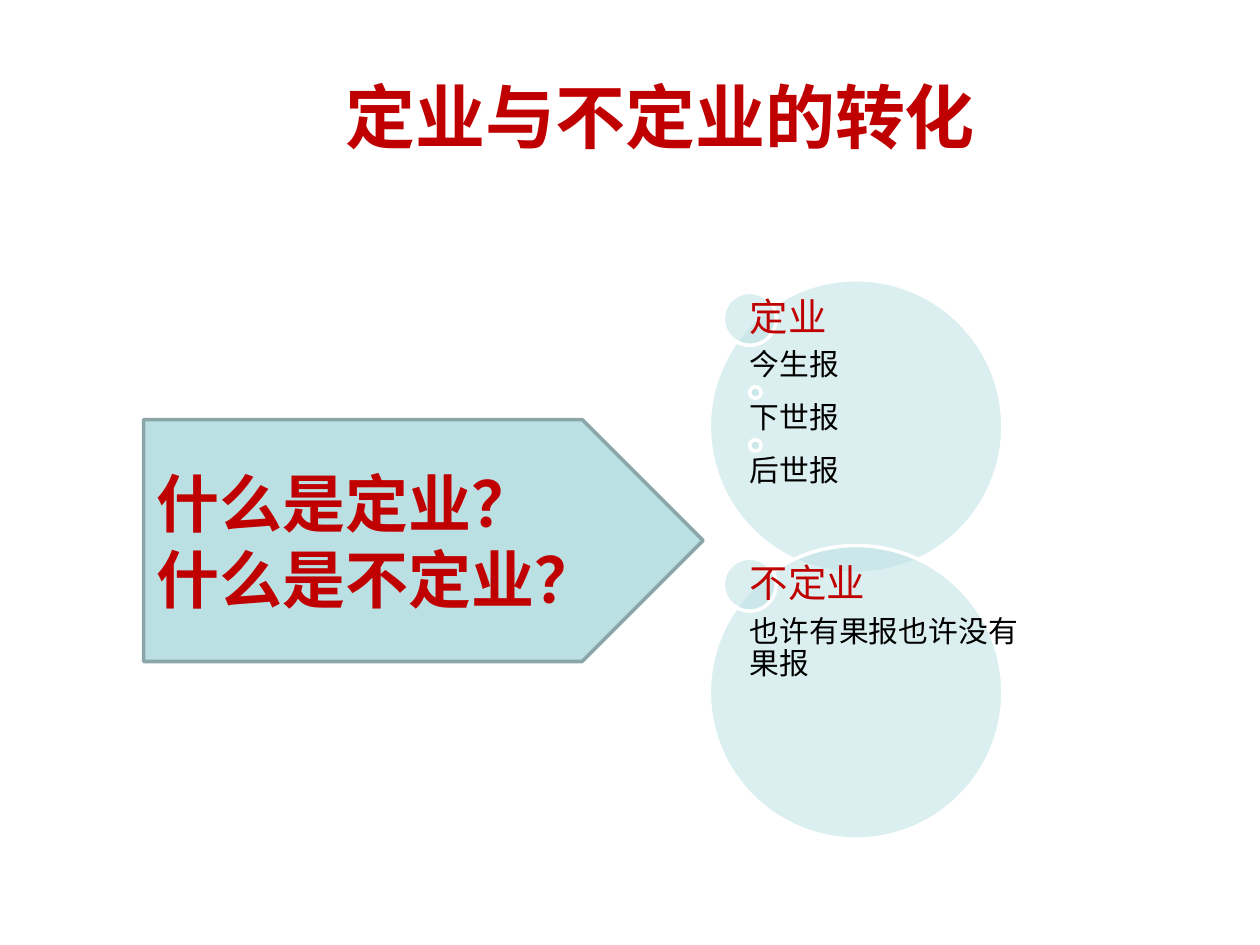
from lxml.etree import SubElement
from pptx import Presentation
from pptx.dml.color import RGBColor
from pptx.enum.shapes import MSO_SHAPE
from pptx.enum.text import MSO_ANCHOR, PP_ALIGN
from pptx.oxml.ns import qn
from pptx.util import Inches, Pt

COLORS = {
    "red": "C00000",
    "black": "000000",
    "white": "FFFFFF",
    "aqua": "BBE0E3",
    "edge": "8AA6A8",
}
TOPICS = [
    (2.22, "定业", 0.33, ["今生报", "下世报", "后世报"]),
    (4.33, "不定业", 0.6, ["也许有果报也许没有果报"]),
]


class SlideBuilder:
    font_name = "Arial"
    line_width = Pt(2)

    def __init__(self, slide):
        self.slide = slide

    def color(self, name):
        return RGBColor.from_string(COLORS[name])

    def set_text(self, shape, lines, size, color, bold=False,
                 align=PP_ALIGN.LEFT, spacing=1.0):
        frame = shape.text_frame
        frame.word_wrap = True
        frame.vertical_anchor = MSO_ANCHOR.MIDDLE
        frame.text = "\n".join(lines)
        for paragraph in frame.paragraphs:
            paragraph.alignment = align
            paragraph.line_spacing = spacing
            paragraph.font.name = self.font_name
            paragraph.font.size = Pt(size)
            paragraph.font.bold = bold
            paragraph.font.color.rgb = self.color(color)

    def shape(self, kind, left, top, width, height, line):
        shape = self.slide.shapes.add_shape(
            kind, Inches(left), Inches(top), Inches(width), Inches(height))
        shape.shadow.inherit = False
        shape.fill.solid()
        shape.fill.fore_color.rgb = self.color("aqua")
        shape.line.color.rgb = self.color(line)
        shape.line.width = self.line_width
        return shape

    def circle(self, left, top, diameter):
        circle = self.shape(MSO_SHAPE.OVAL, left, top, diameter, diameter, "white")
        fill_color = circle.element.spPr.find(qn("a:solidFill"))[0]
        SubElement(fill_color, qn("a:alpha"), val="50000")

    def text(self, left, top, width, height, content, size, color, **style):
        box = self.slide.shapes.add_textbox(
            Inches(left), Inches(top), Inches(width), Inches(height))
        self.set_text(box, [content], size, color, **style)
        return box

    def label(self, top, height, content, size, color, inset):
        box = self.text(5.95, top, 2.25, height, content, size, color, spacing=0.9)
        frame = box.text_frame
        frame.margin_left = frame.margin_right = 0
        frame.margin_top = frame.margin_bottom = Inches(inset)

    def topic(self, top, heading, item_height, items):
        dot = 0.09
        self.circle(5.63, top, 2.33)
        self.circle(5.74, top + 0.1, 0.42)
        self.label(top + 0.1, 0.42, heading, 22, "red", 0.03)
        for index, item in enumerate(items):
            item_top = top + 0.52 + index * (item_height + dot)
            if index:
                self.circle(5.95, item_top - dot, dot)
            self.label(item_top, item_height, item, 17, "black", 0.02)

    def arrow(self, left, top, width, height, lines):
        arrow = self.shape(MSO_SHAPE.PENTAGON, left, top, width, height, "edge")
        self.set_text(arrow, lines, 36, "red", bold=True)


def main():
    presentation = Presentation()
    presentation.slide_width = Inches(10)
    presentation.slide_height = Inches(7.5)
    slide = presentation.slides.add_slide(presentation.slide_layouts[6])
    builder = SlideBuilder(slide)
    builder.text(1.14, 0.29, 8.2, 1.25, "定业与不定业的转化", 40, "red",
                 bold=True, align=PP_ALIGN.CENTER)
    for topic in TOPICS:
        builder.topic(*topic)
    builder.arrow(1.14, 3.33, 4.44, 1.92, ["什么是定业？", "什么是不定业？"])
    presentation.save("out.pptx")


if __name__ == "__main__":
    main()
